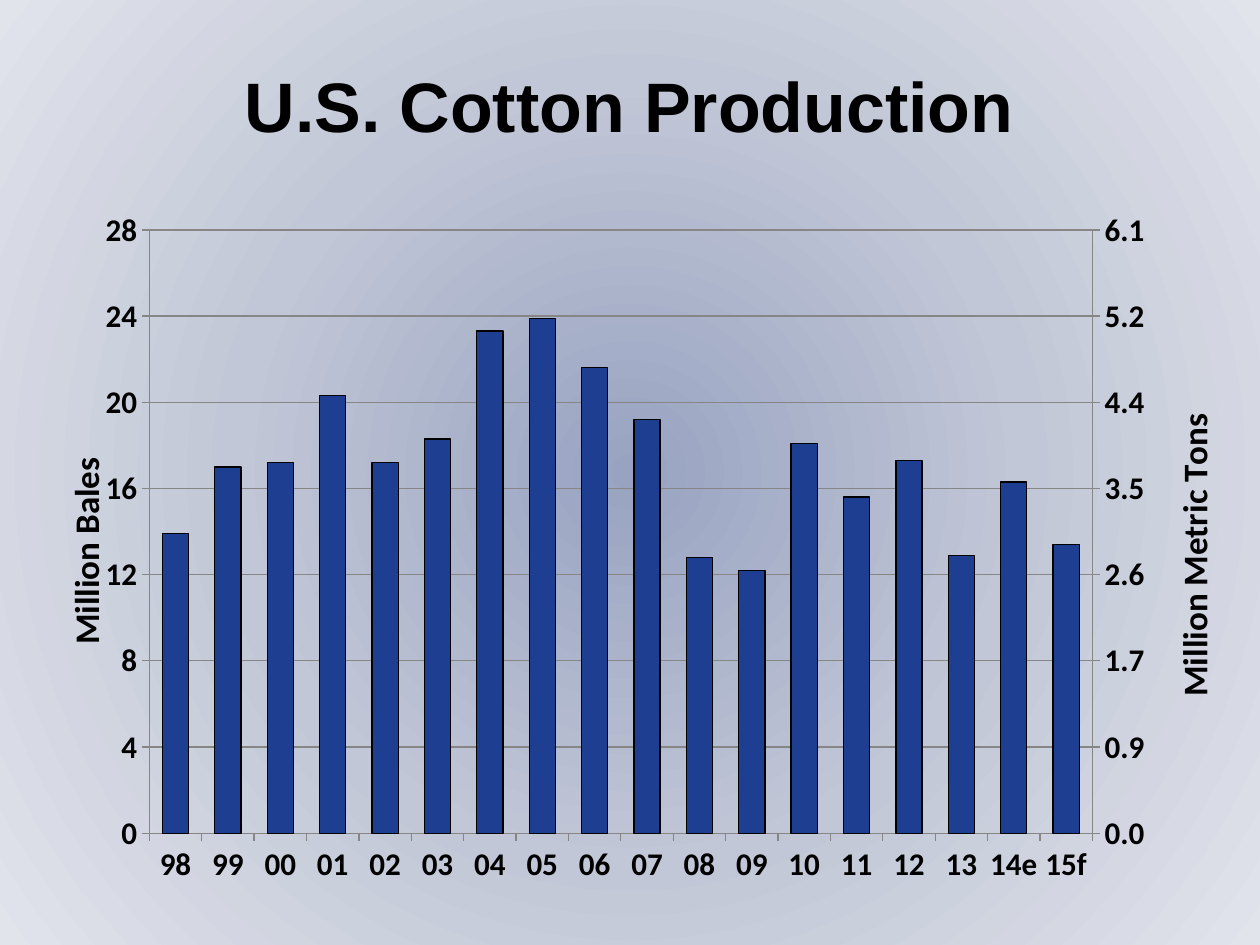
from copy import deepcopy
from dataclasses import dataclass

from lxml import etree
from pptx import Presentation
from pptx.chart.axis import ValueAxis
from pptx.chart.data import CategoryChartData
from pptx.dml.color import RGBColor
from pptx.enum.chart import XL_CHART_TYPE, XL_TICK_LABEL_POSITION, XL_TICK_MARK
from pptx.enum.text import MSO_ANCHOR, PP_ALIGN
from pptx.oxml import parse_xml
from pptx.oxml.ns import nsdecls, qn
from pptx.util import Pt

COLUMNS = XL_CHART_TYPE.COLUMN_CLUSTERED
LOW = XL_TICK_LABEL_POSITION.LOW
OUTSIDE, NO_TICK = XL_TICK_MARK.OUTSIDE, XL_TICK_MARK.NONE
CENTER, MIDDLE = PP_ALIGN.CENTER, MSO_ANCHOR.MIDDLE


@dataclass(frozen=True)
class Theme:
    text: RGBColor = RGBColor(0, 0, 0)
    column: RGBColor = RGBColor(0x1E, 0x3E, 0x92)
    grid: RGBColor = RGBColor(0x86, 0x86, 0x86)
    background: tuple = ((0, "98A3C1"), (50, "C2C7D7"), (100, "E1E4EB"))
    title_font: str = "Arial"
    chart_font: str = "Calibri"
    title_size: int = 40
    axis_title_size: int = 20
    label_size: int = 18
    hairline: float = 0.75


THEME = Theme()
YEARS = ["98", "99", "00", "01", "02", "03", "04", "05", "06",
         "07", "08", "09", "10", "11", "12", "13", "14e", "15f"]
BALES = [13.9, 17, 17.2, 20.3, 17.2, 18.3, 23.3, 23.9, 21.6,
         19.2, 12.8, 12.2, 18.1, 15.6, 17.3, 12.9, 16.3, 13.4]
TONS = [3, 3.7, 3.7, 4.4, 3.7, 4, 5.1, 5.2, 4.7,
        4.2, 2.8, 2.7, 3.9, 3.4, 3.8, 2.8, 3.6, 2.9]
TONS_PER_BALE = 0.217865
BALES_MAX, BALES_STEP = 28, 4


def style_font(font, name, size):
    font.name = name
    font.size = Pt(size)
    font.bold = True
    font.color.rgb = THEME.text


def style_line(line, color):
    line.color.rgb = color
    line.width = Pt(THEME.hairline)


def paint_background(slide):
    slide.background.fill.gradient()
    gradient = next(slide.element.iter(qn("a:gradFill")))
    stops = "".join(
        f'<a:gs pos="{position * 1000}"><a:srgbClr val="{color}"/></a:gs>'
        for position, color in THEME.background)
    gradient.getparent().replace(gradient, parse_xml(
        f'<a:gradFill {nsdecls("a")} rotWithShape="1"><a:gsLst>{stops}</a:gsLst>'
        '<a:path path="circle">'
        '<a:fillToRect l="50000" t="50000" r="50000" b="50000"/>'
        '</a:path></a:gradFill>'))


def add_title(slide, text):
    shape = slide.shapes.add_textbox(Pt(18), Pt(24), Pt(683), Pt(72))
    frame = shape.text_frame
    frame.word_wrap = True
    frame.vertical_anchor = MIDDLE
    frame.text = text
    paragraph = frame.paragraphs[0]
    paragraph.alignment = CENTER
    style_font(paragraph.runs[0].font, THEME.title_font, THEME.title_size)


def set_layout(parent, index, target=None, **fractions):
    for layout in parent.findall(qn("c:layout")):
        parent.remove(layout)
    layout = parse_xml(f'<c:layout {nsdecls("c")}><c:manualLayout/></c:layout>')
    settings = {"layoutTarget": target} if target else {}
    settings.update(xMode="edge", yMode="edge", **fractions)
    for name, value in settings.items():
        etree.SubElement(layout[0], qn(f"c:{name}")).set("val", str(value))
    parent.insert(index, layout)


def style_axis(axis):
    axis.major_tick_mark = OUTSIDE
    axis.minor_tick_mark = NO_TICK
    style_font(axis.tick_labels.font, THEME.chart_font, THEME.label_size)
    style_line(axis.format.line, THEME.grid)


def style_value_axis(axis, title, number_format, maximum, step, x, y):
    style_axis(axis)
    axis.minimum_scale = 0
    axis.maximum_scale = maximum
    axis.major_unit = step
    axis.tick_labels.number_format = number_format
    axis.tick_labels.number_format_is_linked = False
    frame = axis.axis_title.text_frame
    frame.text = title
    style_font(frame.paragraphs[0].runs[0].font,
               THEME.chart_font, THEME.axis_title_size)
    title_element = axis._element.find(qn("c:title"))
    body = next(title_element.iter(qn("a:bodyPr")))
    body.set("rot", "-5400000")
    body.set("vert", "horz")
    set_layout(title_element, 1, x=x, y=y)


def add_right_axis(plot_area):
    columns, category, value = (
        plot_area.find(qn(f"c:{tag}")) for tag in ("barChart", "catAx", "valAx"))
    right_columns, right_category, right_value = map(
        deepcopy, (columns, category, value))
    new_ids = {category.find(qn("c:axId")).get("val"): "50010",
               value.find(qn("c:axId")).get("val"): "50020"}
    for element in (right_columns, right_category, right_value):
        for reference in element.iter(qn("c:axId"), qn("c:crossAx")):
            reference.set("val", new_ids[reference.get("val")])
    columns.remove(columns.findall(qn("c:ser"))[1])
    right_columns.remove(right_columns.find(qn("c:ser")))
    right_category.find(qn("c:delete")).set("val", "1")
    right_value.find(qn("c:axPos")).set("val", "r")
    right_value.find(qn("c:crosses")).set("val", "max")
    columns.addnext(right_columns)
    value.addnext(right_value)
    right_value.addnext(right_category)
    axis = ValueAxis(right_value)
    axis.has_major_gridlines = False
    return axis


def add_production_chart(slide):
    data = CategoryChartData()
    data.categories = YEARS
    data.add_series("Series 1", BALES)
    data.add_series("Series 2", TONS)
    chart = slide.shapes.add_chart(
        COLUMNS, Pt(18), Pt(84), Pt(683), Pt(431), data).chart
    chart.has_legend = False
    chart.has_title = False
    style_font(chart.font, THEME.chart_font, THEME.label_size)

    plot = chart.plots[0]
    plot.gap_width = 100
    plot.vary_by_categories = False
    bales, tons = plot.series
    bales.format.fill.solid()
    bales.format.fill.fore_color.rgb = THEME.column
    style_line(bales.format.line, THEME.text)
    tons.format.fill.background()
    tons.format.line.fill.background()

    style_axis(chart.category_axis)
    chart.category_axis.tick_label_position = LOW
    left_axis = chart.value_axis
    left_axis.has_major_gridlines = True
    style_line(left_axis.major_gridlines.format.line, THEME.grid)

    plot_area = next(chart.element.iter(qn("c:plotArea")))
    right_axis = add_right_axis(plot_area)
    set_layout(plot_area, 0, "inner", x=0.1, y=0.11, w=0.8, h=0.8)
    style_value_axis(left_axis, "Million Bales", "General",
                     BALES_MAX, BALES_STEP, 0.02, 0.4)
    style_value_axis(right_axis, "Million Metric Tons", "#,##0.0",
                     BALES_MAX * TONS_PER_BALE, BALES_STEP * TONS_PER_BALE,
                     0.96, 0.34)


def main():
    presentation = Presentation()
    presentation.slide_width = Pt(720)
    presentation.slide_height = Pt(540)
    slide = presentation.slides.add_slide(presentation.slide_layouts[6])
    paint_background(slide)
    add_title(slide, "U.S. Cotton Production")
    add_production_chart(slide)
    presentation.save("out.pptx")


if __name__ == "__main__":
    main()
